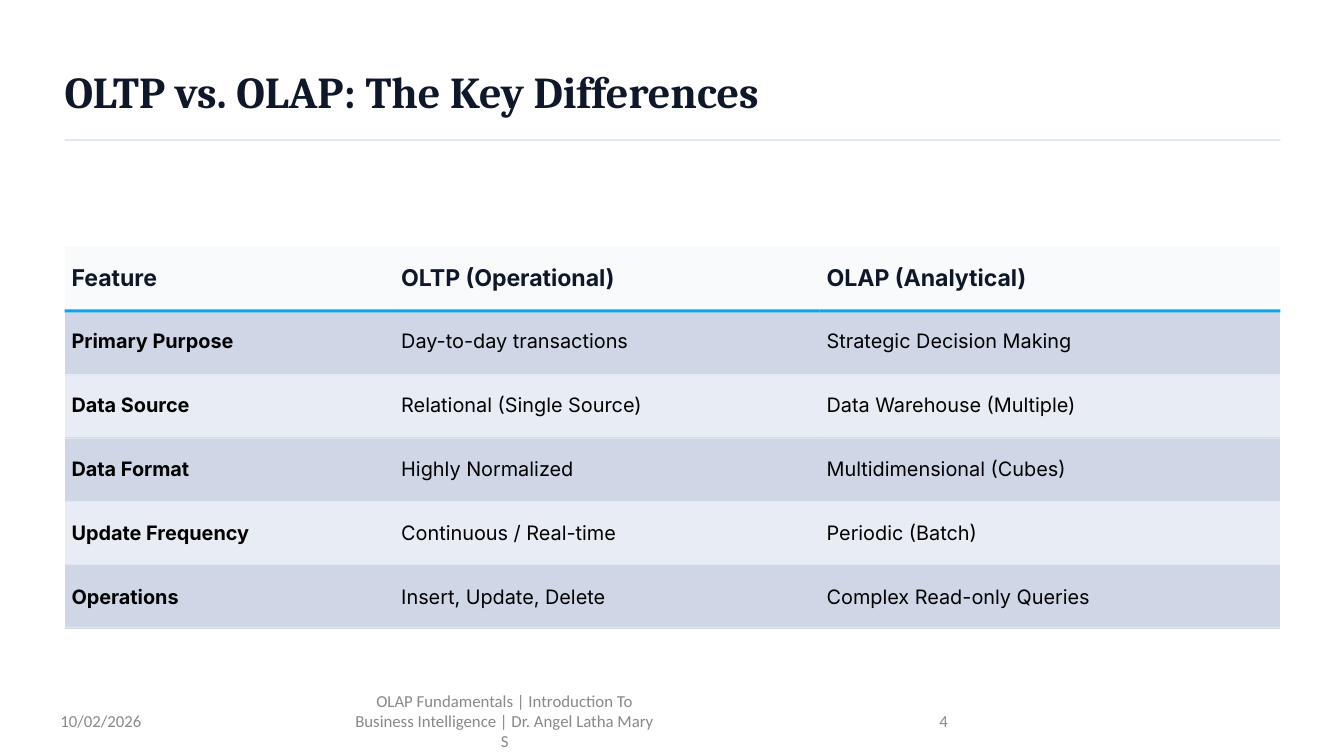
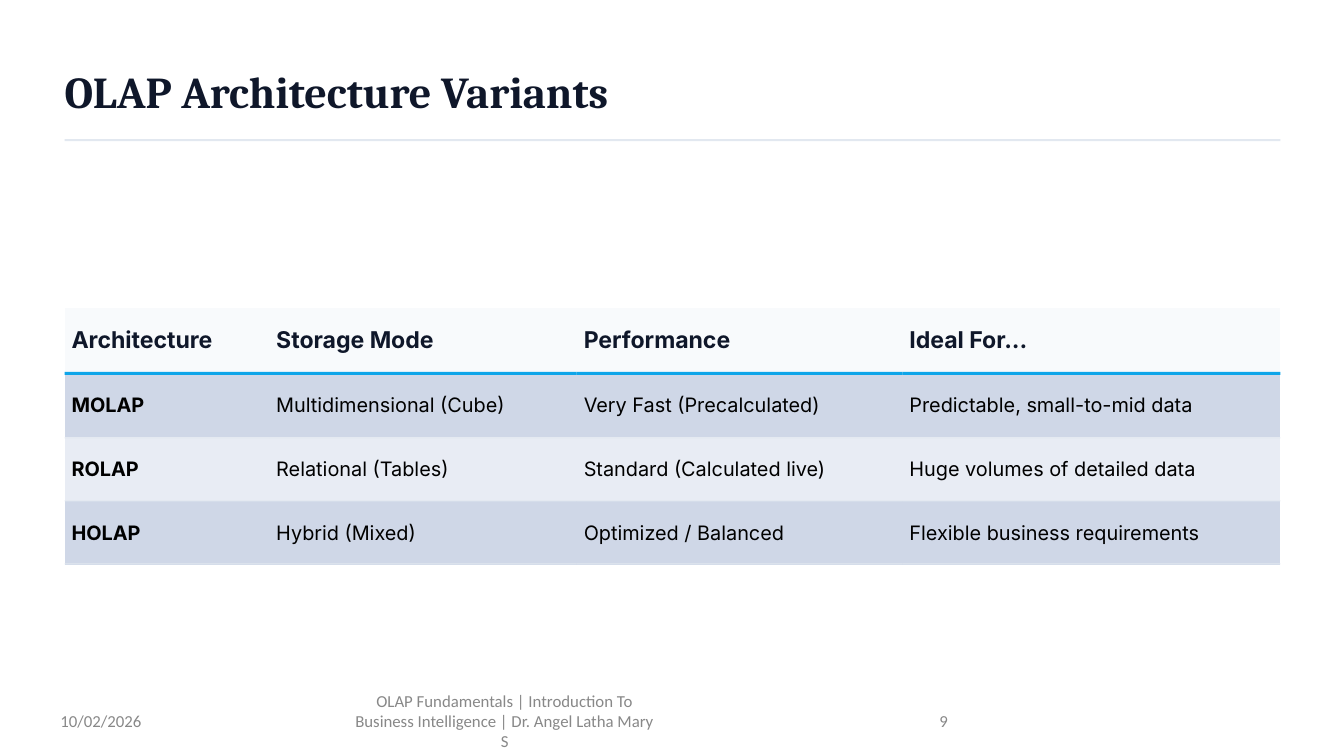
from itertools import accumulate

from pptx import Presentation
from pptx.dml.color import RGBColor
from pptx.enum.shapes import MSO_SHAPE as SHAPE
from pptx.enum.text import MSO_ANCHOR as ANCHOR, PP_ALIGN as ALIGN
from pptx.util import Inches, Pt

COLORS = {
    "ink": "0F172A", "body": "000000", "muted": "888888",
    "head": "F8FAFC", "odd": "CFD7E7", "even": "E8ECF4",
    "rule": "E2E8F0", "accent": "0EA5E9",
}
LEFT, WIDTH = 0.64, 12.06
HEAD_RULE, FIRST_RULE, RULE_STEP = 0.63, 1.28, 5 / 8
NO_GRID = "{2D5ABB26-0587-4C30-8999-92F81FD0307C}"
DATE = "10/02/2026"
FOOTER = "OLAP Fundamentals | Introduction To Business Intelligence | Dr. Angel Latha Mary S"

SLIDES = [
    {
        "title": "OLTP vs. OLAP: The Key Differences",
        "number": "4", "top": 2.44, "height": 3.8,
        "cols": [3.27, 4.22, 4.57],
        "rows": [
            ["Feature", "OLTP (Operational)", "OLAP (Analytical)"],
            ["Primary Purpose", "Day-to-day transactions", "Strategic Decision Making"],
            ["Data Source", "Relational (Single Source)", "Data Warehouse (Multiple)"],
            ["Data Format", "Highly Normalized", "Multidimensional (Cubes)"],
            ["Update Frequency", "Continuous / Real-time", "Periodic (Batch)"],
            ["Operations", "Insert, Update, Delete", "Complex Read-only Queries"],
        ],
    },
    {
        "title": "OLAP Architecture Variants",
        "number": "9", "top": 3.06, "height": 2.55,
        "cols": [2.03, 3.05, 3.23, 3.75],
        "rows": [
            ["Architecture", "Storage Mode", "Performance", "Ideal For..."],
            ["MOLAP", "Multidimensional (Cube)", "Very Fast (Precalculated)",
             "Predictable, small-to-mid data"],
            ["ROLAP", "Relational (Tables)", "Standard (Calculated live)",
             "Huge volumes of detailed data"],
            ["HOLAP", "Hybrid (Mixed)", "Optimized / Balanced",
             "Flexible business requirements"],
        ],
    },
]


def rgb(name):
    """Return a palette colour."""
    return RGBColor.from_string(COLORS[name])


def style(p, font, size, color, bold=False):
    """Set the font of a whole paragraph."""
    p.font.name, p.font.size, p.font.bold = font, Pt(size), bold
    p.font.color.rgb = rgb(color)


def add_rule(s, x, y, w, h, color):
    """Draw a thin filled bar."""
    bar = s.shapes.add_shape(SHAPE.RECTANGLE, Inches(x), Inches(y), Inches(w), Inches(h))
    bar.shadow.inherit = False
    bar.fill.solid()
    bar.fill.fore_color.rgb = rgb(color)
    bar.line.fill.background()


def add_text(s, box, text, align=ALIGN.LEFT):
    """Add a wrapping text box and return its frame."""
    tf = s.shapes.add_textbox(*map(Inches, box)).text_frame
    tf.word_wrap = True
    p = tf.paragraphs[0]
    p.text, p.alignment = text, align
    return tf


def add_title(s, text):
    """Place the title and the rule below it."""
    tf = add_text(s, (LEFT, 0.64, 12.67, 0.6), text)
    tf.margin_left = tf.margin_right = tf.margin_top = tf.margin_bottom = 0
    style(tf.paragraphs[0], "Cambria", 31.5, "ink", True)
    add_rule(s, LEFT, 1.38, WIDTH, 0.02, "rule")


def add_footer(s, number):
    """Place the date, footer text and slide number."""
    for x, w, text, align in (
        (0.5, 2.33, DATE, ALIGN.LEFT),
        (3.42, 3.17, FOOTER, ALIGN.CENTER),
        (7.17, 2.33, number, ALIGN.RIGHT),
    ):
        tf = add_text(s, (x, 6.95, w, 0.4), text, align)
        tf.vertical_anchor = ANCHOR.MIDDLE
        style(tf.paragraphs[0], "Calibri", 12, "muted")


def fill_cell(cell, text, row, col):
    """Write and style one table cell."""
    cell.margin_left = cell.margin_right = Inches(0.07)
    cell.margin_top = cell.margin_bottom = Inches(0.03)
    cell.vertical_anchor = ANCHOR.MIDDLE
    cell.fill.solid()
    cell.fill.fore_color.rgb = rgb("head" if row == 0 else "odd" if row % 2 else "even")
    p = cell.text_frame.paragraphs[0]
    p.text = text
    if row == 0:
        style(p, "Inter", 16.5, "ink", True)
    else:
        style(p, "Inter", 14.2, "body", col == 0)


def add_grid(s, top, height, cols, rows):
    """Place the table with its rules below every row."""
    frame = s.shapes.add_table(len(rows), len(cols), Inches(LEFT), Inches(top),
                               Inches(WIDTH), Inches(height))
    table = frame.table
    table._tbl.tblPr.find("{*}tableStyleId").text = NO_GRID
    for column, w in zip(table.columns, cols):
        column.width = Inches(w)
    for i, texts in enumerate(rows):
        table.rows[i].height = Inches(height / len(rows))
        for j, text in enumerate(texts):
            fill_cell(table.cell(i, j), text, i, j)

    lefts = list(accumulate(cols[:-1], initial=LEFT))
    for i in range(len(rows)):
        if i == 0:
            y, h, color = top + HEAD_RULE, 0.03, "accent"
        else:
            y, h, color = top + FIRST_RULE + (i - 1) * RULE_STEP, 0.01, "rule"
        for x, w in zip(lefts, cols):
            add_rule(s, x, y, w, h, color)


def add_table_slide(prs, title, number, top, height, cols, rows):
    """Build one titled slide with a table."""
    s = prs.slides.add_slide(prs.slide_layouts[6])
    add_grid(s, top, height, cols, rows)
    add_title(s, title)
    add_footer(s, number)


def main():
    """Build and save the presentation."""
    prs = Presentation()
    prs.slide_width, prs.slide_height = Inches(13.33), Inches(7.5)
    for content in SLIDES:
        add_table_slide(prs, **content)
    prs.save("out.pptx")


if __name__ == "__main__":
    main()
